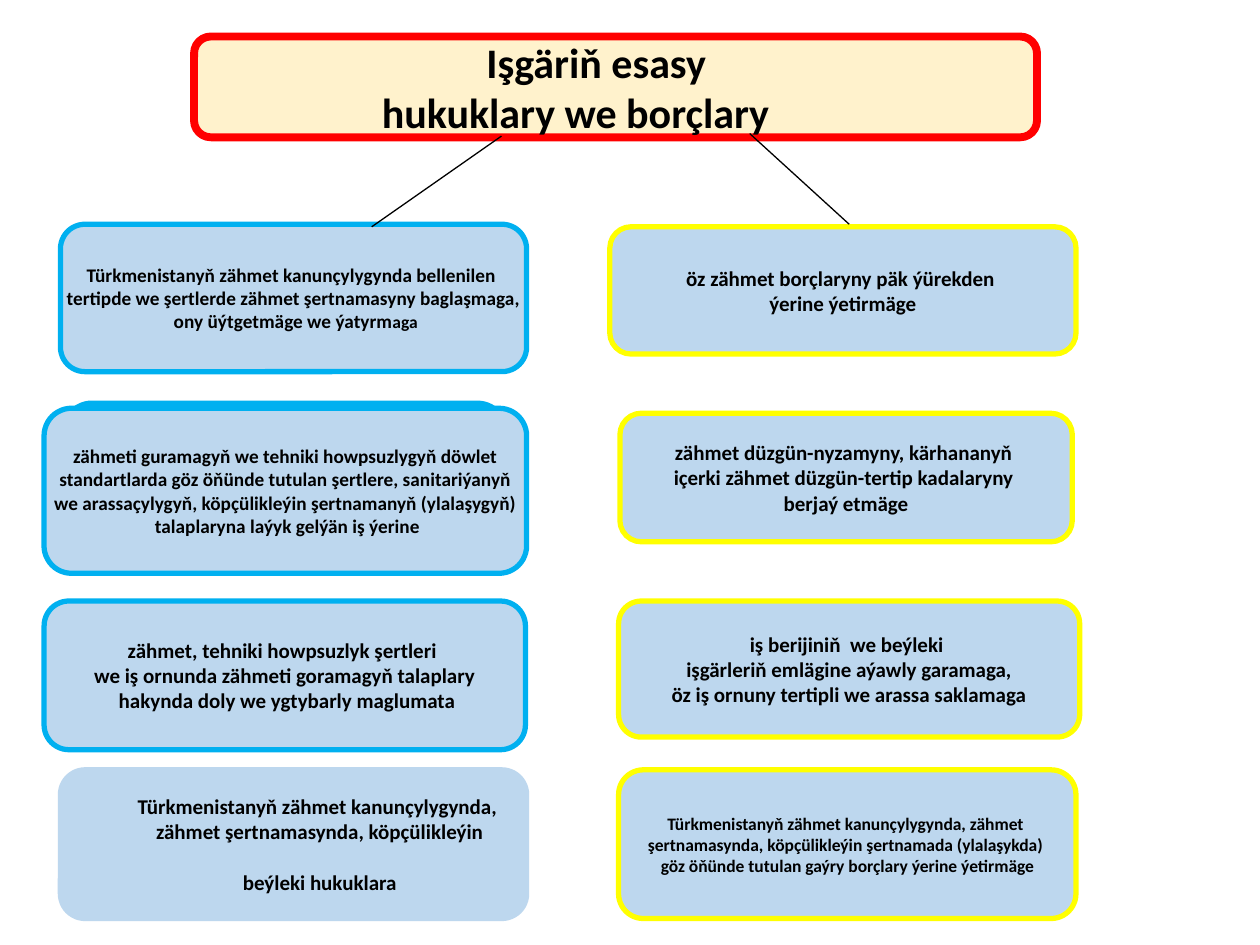
from pptx import Presentation
from pptx.dml.color import RGBColor
from pptx.enum.shapes import MSO_CONNECTOR as Link, MSO_SHAPE as Shape
from pptx.enum.text import MSO_ANCHOR as Anchor, MSO_AUTO_SIZE as Fit, PP_ALIGN as Align
from pptx.util import Inches, Pt
from lxml.etree import SubElement
from pptx.oxml.ns import qn

HUES = {"cream": "FFF2CC", "red": "FF0000", "pale": "BDD7EE",
        "blue": "00B0F0", "yellow": "FFFF00", "black": "000000"}

# Title lines with their left indents
TITLE_BOX = (1.54, 0.29, 6.69, 0.8)
TITLE = [("Işgäriň esasy", 2.22), ("hukuklary we borçlary", 1.39)]

# Boxes: place, line colour, text size, first-line indent, lines
RIGHTS = [
    ((0.48, 1.78, 3.7, 1.17), "blue", 11, 0, [
        "Türkmenistanyň zähmet kanunçylygynda bellenilen ",
        "tertipde we şertlerde zähmet şertnamasyny baglaşmaga,",
        " ony üýtgetmäge we ýatyrmaga"]),
    ((0.51, 3.2, 3.5, 1.31), "blue", 11, 0, []),
    ((0.35, 3.24, 3.83, 1.31), "blue", 11, 0, [
        "zähmeti guramagyň we tehniki howpsuzlygyň döwlet",
        " standartlarda göz öňünde tutulan şertlere, sanitariýanyň ",
        "we arassaçylygyň, köpçülikleýin şertnamanyň (ylalaşygyň)",
        " talaplaryna laýyk gelýän iş ýerine"]),
    ((0.35, 4.77, 3.82, 1.18), "blue", 12, 0, [
        "zähmet, tehniki howpsuzlyk şertleri ",
        "we iş ornunda zähmeti goramagyň talaplary",
        " hakynda doly we ygtybarly maglumata"]),
    ((0.48, 6.11, 3.7, 1.18), "pale", 12, 0.38, [
        "Türkmenistanyň zähmet kanunçylygynda,",
        " zähmet şertnamasynda, köpçülikleýin",
        " beýleki hukuklara"]),
]
DUTIES = [
    ((4.84, 1.8, 3.7, 1.01), "yellow", 12, 0, [
        "öz zähmet borçlaryny päk ýürekden ",
        "ýerine ýetirmäge"]),
    ((4.92, 3.28, 3.59, 1.02), "yellow", 12, 0, [
        "zähmet düzgün-nyzamyny, kärhananyň ",
        "içerki zähmet düzgün-tertip kadalaryny ",
        "berjaý etmäge"]),
    ((4.91, 4.77, 3.66, 1.08), "yellow", 12, 0, [
        "iş berijiniň  we beýleki ",
        "işgärleriň emlägine aýawly garamaga,",
        "öz iş ornuny tertipli we arassa saklamaga"]),
    ((4.91, 6.11, 3.63, 1.18), "yellow", 10, 0, [
        "Türkmenistanyň zähmet kanunçylygynda, zähmet ",
        "şertnamasynda, köpçülikleýin şertnamada (ylalaşykda) ",
        "göz öňünde tutulan gaýry borçlary ýerine ýetirmäge"]),
]
LINKS = [(3.98, 1.08, 2.95, 1.8), (5.95, 1.06, 6.74, 1.78)]
SMALL_END = "aga"  # closing letters of the first right, one point smaller
LINE_GAP = 14.65  # one line of 12 point text, above the last right


def hue(name):
    return RGBColor.from_string(HUES[name])


def add_shape(slide, kind, place, fill, line, width):
    shape = slide.shapes.add_shape(kind, *map(Inches, place))
    shape.shadow.inherit = False
    shape.fill.solid()
    shape.fill.fore_color.rgb = hue(fill)
    shape.line.color.rgb = hue(line)
    shape.line.width = Pt(width)
    return shape


def style(run, size):
    run.font.name = "Calibri"
    run.font.size = Pt(size)
    run.font.bold = True
    run.font.color.rgb = hue("black")


def write(frame, lines, size, align, wrap):
    frame.text = "\n".join(lines)
    frame.word_wrap = wrap
    frame.vertical_anchor = Anchor.MIDDLE
    for para in frame.paragraphs:
        para.alignment = align
        for run in para.runs:
            style(run, size)


def add_title(slide):
    title = slide.shapes.title
    title.left, title.top, title.width, title.height = map(Inches, TITLE_BOX)
    # Rounded plate behind the title text
    plate = add_shape(slide, Shape.FLOWCHART_ALTERNATE_PROCESS, TITLE_BOX,
                      "cream", "red", 4.5)
    title.element.addprevious(plate.element)
    frame = title.text_frame
    write(frame, [text for text, _ in TITLE], 24, Align.LEFT, True)
    frame.auto_size = Fit.NONE
    frame.margin_top = frame.margin_bottom = 0
    for para, (_, left) in zip(frame.paragraphs, TITLE):
        para.line_spacing = 1.0
        para.space_before = Pt(0)
        para._p.get_or_add_pPr().set("marL", str(Inches(left)))


def add_box(slide, place, line, size, indent, lines):
    box = add_shape(slide, Shape.ROUNDED_RECTANGLE, place, "pale", line, 3)
    if lines:
        write(box.text_frame, lines, size, Align.CENTER, False)
    if indent:
        for para in box.text_frame.paragraphs:
            para._p.get_or_add_pPr().set("indent", str(Inches(indent)))
    return box


def add_link(slide, ends):
    link = slide.shapes.add_connector(Link.STRAIGHT, *map(Inches, ends))
    link.line.color.rgb = hue("black")
    link.line.width = Pt(0.75)
    SubElement(link.element.spPr, qn("a:effectLst"))


def main():
    deck = Presentation()
    deck.slide_width, deck.slide_height = Inches(10), Inches(7.5)
    slide = deck.slides.add_slide(deck.slide_layouts[5])
    add_title(slide)

    # Rights on the left, duties on the right
    rights = [add_box(slide, *item) for item in RIGHTS]
    for item in DUTIES:
        add_box(slide, *item)
    rights[-1].text_frame.paragraphs[-1].space_before = Pt(LINE_GAP)
    end = rights[0].text_frame.paragraphs[-1]
    end.runs[0].text = end.text.removesuffix(SMALL_END)
    tail = end.add_run()
    tail.text = SMALL_END
    style(tail, 10)

    # Lines from the title to both columns
    for ends in LINKS:
        add_link(slide, ends)
    deck.save("out.pptx")


if __name__ == "__main__":
    main()
